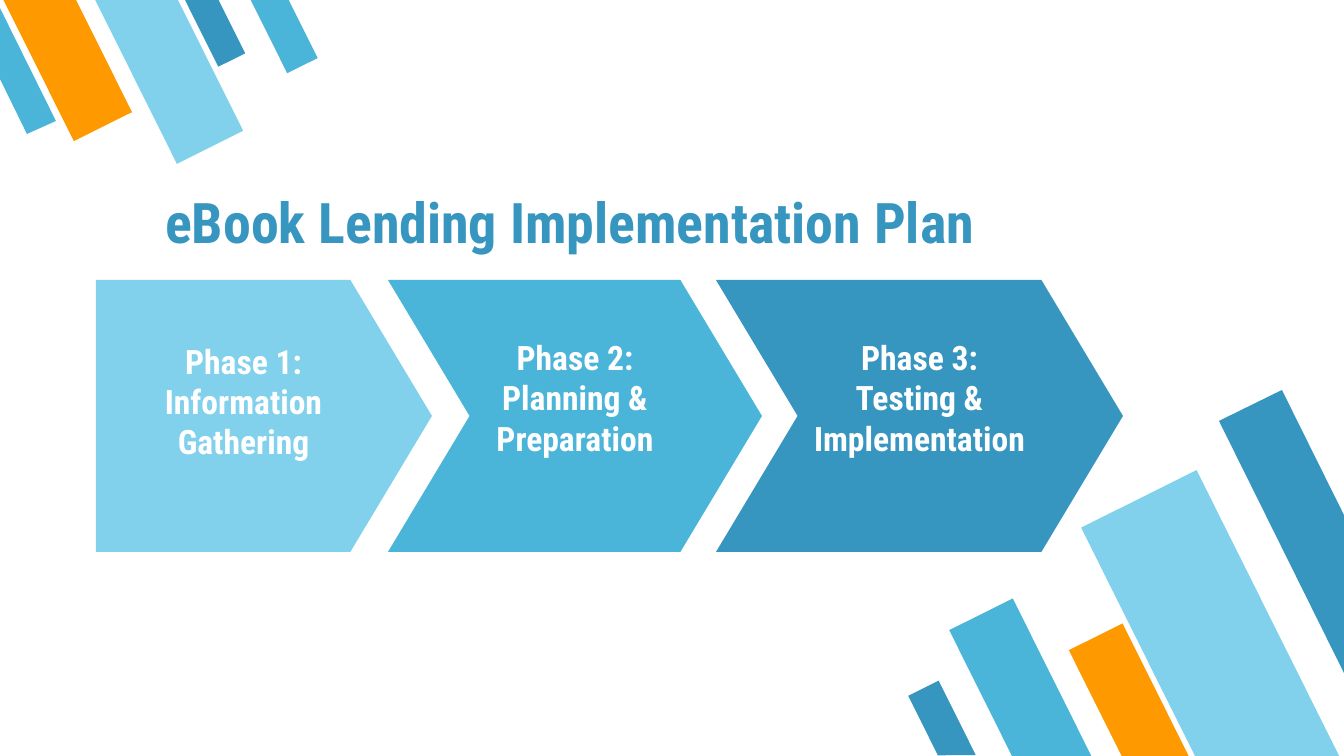
import pptx
import pptx.util
import pptx.dml.color
import pptx.enum.shapes
import pptx.enum.text

SCALE = 914400 / 134.4
FONT = "Roboto Condensed"
SKY, BLUE, DEEP, ORANGE, WHITE = "81D1EC", "4BB5D9", "3796BF", "FF9900", "FFFFFF"
SHAPE = pptx.enum.shapes.MSO_SHAPE
ALIGN = pptx.enum.text.PP_ALIGN
ANCHOR = pptx.enum.text.MSO_ANCHOR

BARS = [
    (153.5, [(985, 605, 71, 177, BLUE), (1146, 482, 129, 321, SKY),
             (1099, 629, 60, 149, ORANGE), (925, 684, 34, 83, DEEP)]),
    (333.5, [(200, -11, 30, 75, DEEP), (35, -24, 65, 159, ORANGE),
             (132, -27, 74, 184, SKY), (267, -13, 34, 83, BLUE)]),
]
CUT_BARS = [
    (DEEP, [(1282, 390), (1219, 421), (1344, 673), (1344, 515)]),
    (BLUE, [(27, 134), (56, 121), (0, 8), (0, 79)]),
]
PHASES = [
    (SHAPE.PENTAGON, 96, 336, SKY, 43, ["Phase 1:", "Information Gathering"]),
    (SHAPE.CHEVRON, 388, 374, BLUE, 50, ["Phase 2:", "Planning & Preparation"]),
    (SHAPE.CHEVRON, 716, 407, DEEP, 50, ["Phase 3:", "Testing &", "Implementation"]),
]


def px(n):
    """Turn pixels into EMU."""
    return pptx.util.Emu(round(n * SCALE))


def rgb(value):
    """Turn a hex string into a colour."""
    return pptx.dml.color.RGBColor.from_string(value)


def apply(obj, values):
    """Set each named attribute on an object."""
    for name, value in values.items():
        setattr(obj, name, value)


def paint(sp, color):
    """Give a shape a flat fill without line or shadow."""
    sp.shadow.inherit = False
    sp.fill.solid()
    sp.fill.fore_color.rgb = rgb(color)
    sp.line.fill.background()


def write(sp, lines, size, color, align, anchor, bottom=13):
    """Write bold paragraphs into a shape."""
    tf = sp.text_frame
    apply(tf, {"word_wrap": True, "auto_size": pptx.enum.text.MSO_AUTO_SIZE.NONE,
               "vertical_anchor": anchor, "margin_left": px(13), "margin_right": px(13),
               "margin_top": px(13), "margin_bottom": px(bottom)})
    for i, line in enumerate(lines):
        p = tf.add_paragraph() if i else tf.paragraphs[0]
        p.alignment = align
        r = p.add_run()
        r.text = line
        apply(r.font, {"name": FONT, "size": pptx.util.Pt(size), "bold": True})
        r.font.color.rgb = rgb(color)


def add_bar(s, x, y, w, h, color, angle):
    """Add a mirrored, tilted bar."""
    sp = s.shapes.add_shape(SHAPE.FLOWCHART_MANUAL_INPUT, px(x), px(y), px(w), px(h))
    sp.element.spPr.xfrm.set("flipH", "1")
    sp.rotation = angle
    paint(sp, color)


def add_cut_bar(s, color, points):
    """Add a bar cut off by the slide edge."""
    builder = s.shapes.build_freeform(*points[0], scale=SCALE)
    builder.add_line_segments(points[1:], close=True)
    paint(builder.convert_to_shape(), color)


def add_phase(s, kind, x, w, color, bottom, lines):
    """Add one arrow of the plan."""
    sp = s.shapes.add_shape(kind, px(x), px(280), px(w), px(272))
    sp.adjustments[0] = 0.3
    paint(sp, color)
    write(sp, lines, 18, WHITE, ALIGN.CENTER, ANCHOR.MIDDLE, bottom)


def add_title(s, text):
    """Place and format the title placeholder."""
    sp = s.shapes.title
    apply(sp, {"left": px(152), "top": px(169), "width": px(874), "height": px(99)})
    write(sp, [text], 30, DEEP, ALIGN.LEFT, ANCHOR.BOTTOM)


def main():
    """Build the slide and save it."""
    prs = pptx.Presentation()
    apply(prs, {"slide_width": px(1344), "slide_height": px(756)})
    s = prs.slides.add_slide(prs.slide_layouts[5])
    for angle, bars in BARS:
        for bar in bars:
            add_bar(s, *bar, angle)
    for cut_bar in CUT_BARS:
        add_cut_bar(s, *cut_bar)
    add_title(s, "eBook Lending Implementation Plan")
    for phase in PHASES:
        add_phase(s, *phase)
    prs.save("out.pptx")


if __name__ == "__main__":
    main()
